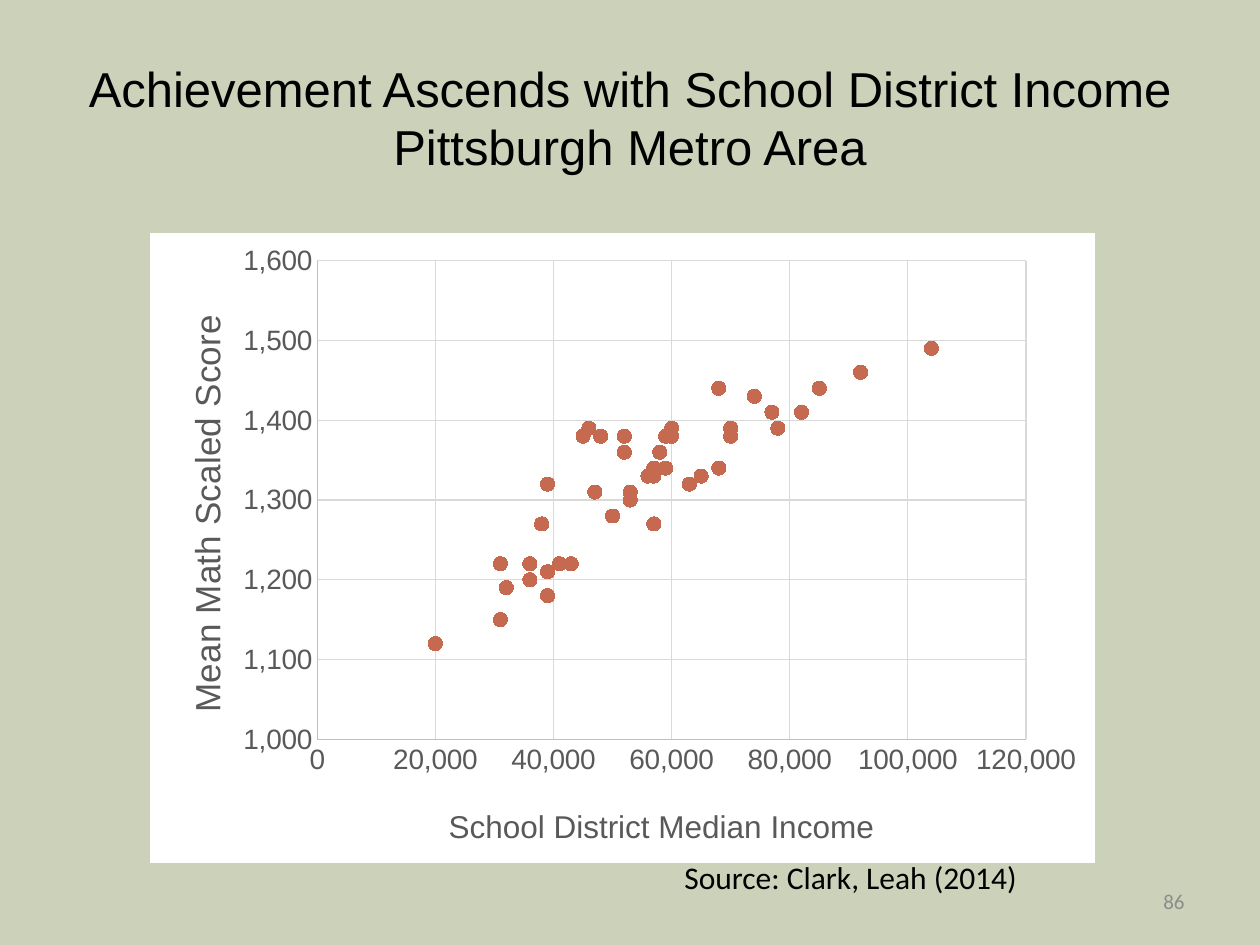
import lxml.etree
import pptx
import pptx.chart.data
import pptx.dml.color
import pptx.enum.chart
import pptx.enum.text
import pptx.oxml
import pptx.oxml.ns
import pptx.util

RGBColor = pptx.dml.color.RGBColor
SAGE = RGBColor(0xCC, 0xD1, 0xB9)
BLACK = RGBColor(0, 0, 0)
WHITE = RGBColor(0xFF, 0xFF, 0xFF)
TERRACOTTA = RGBColor(0xC6, 0x69, 0x51)
LABEL_GRAY = RGBColor(0x59, 0x59, 0x59)
AXIS_GRAY = RGBColor(0xBF, 0xBF, 0xBF)
GRID_GRAY = RGBColor(0xD9, 0xD9, 0xD9)
NUMBER_GRAY = RGBColor(0x8C, 0x8C, 0x8C)
PX_PER_INCH = 126

INCOME_THOUSANDS = [
    20, 31, 31, 32, 36, 36, 38, 39, 39, 39, 41, 43, 45, 46, 47,
    48, 50, 52, 52, 53, 53, 56, 57, 57, 57, 58, 59, 59, 60, 60,
    63, 65, 68, 68, 70, 70, 74, 77, 78, 82, 85, 92, 104,
]
MATH_SCORES = [
    1120, 1220, 1150, 1190, 1220, 1200, 1270, 1210, 1320, 1180, 1220, 1220, 1380, 1390, 1310,
    1380, 1280, 1380, 1360, 1300, 1310, 1330, 1340, 1330, 1270, 1360, 1340, 1380, 1390, 1380,
    1320, 1330, 1340, 1440, 1390, 1380, 1430, 1410, 1390, 1410, 1440, 1460, 1490,
]


def px(length):
    """Turn slide pixels into EMU."""
    return pptx.util.Inches(length / PX_PER_INCH)


def style_font(font, size, color, name="Arial"):
    """Set the size, colour and typeface of a font."""
    font.size = pptx.util.Pt(size)
    font.color.rgb = color
    font.name = name
    font.bold = False


def style_line(line, color):
    """Set a thin solid line."""
    line.color.rgb = color
    line.width = pptx.util.Pt(0.75)


def set_layout(layout, **settings):
    """Fill a chart layout element with manual settings."""
    for child in list(layout):
        layout.remove(child)
    manual = lxml.etree.SubElement(layout, pptx.oxml.ns.qn("c:manualLayout"))
    for tag, value in settings.items():
        lxml.etree.SubElement(manual, pptx.oxml.ns.qn(f"c:{tag}")).set("val", str(value))


def add_heading(slide, left, top, width, height):
    """Place the two-line slide title."""
    heading = slide.shapes.title
    heading.left, heading.top = px(left), px(top)
    heading.width, heading.height = px(width), px(height)
    heading.text_frame.text = (
        "Achievement Ascends with School District Income\vPittsburgh Metro Area"
    )
    heading.text_frame.vertical_anchor = pptx.enum.text.MSO_ANCHOR.MIDDLE
    paragraph = heading.text_frame.paragraphs[0]
    paragraph.alignment = pptx.enum.text.PP_ALIGN.CENTER
    for run in paragraph.runs:
        style_font(run.font, 28, BLACK)


def style_axis(axis, title, title_size, minimum, maximum, step):
    """Set the scale, grid, labels and title of one axis."""
    axis.minimum_scale, axis.maximum_scale, axis.major_unit = minimum, maximum, step
    axis.major_tick_mark = axis.minor_tick_mark = pptx.enum.chart.XL_TICK_MARK.NONE
    axis.has_major_gridlines = True
    style_line(axis.major_gridlines.format.line, GRID_GRAY)
    style_line(axis.format.line, AXIS_GRAY)
    axis.tick_labels.number_format = "#,##0"
    axis.tick_labels.number_format_is_linked = False
    style_font(axis.tick_labels.font, 16, LABEL_GRAY)
    axis.axis_title.text_frame.text = title
    style_font(axis.axis_title.text_frame.paragraphs[0].runs[0].font, title_size, LABEL_GRAY)


def add_score_chart(slide, left, top, width, height):
    """Place the scatter chart of scores against income."""
    data = pptx.chart.data.XyChartData()
    districts = data.add_series("Series 1")
    for income, score in zip(INCOME_THOUSANDS, MATH_SCORES):
        districts.add_data_point(income * 1000, score)
    chart = slide.shapes.add_chart(
        pptx.enum.chart.XL_CHART_TYPE.XY_SCATTER,
        px(left), px(top), px(width), px(height), data,
    ).chart
    chart.has_legend = chart.has_title = False
    style_font(chart.font, 14, BLACK)
    style_axis(chart.category_axis, "School District Median Income", 18, 0, 120000, 20000)
    style_axis(chart.value_axis, "Mean Math Scaled Score", 20, 1000, 1600, 100)

    plot = chart.plots[0]
    plot.vary_by_categories = False
    points = plot.series[0]
    points.format.line.fill.background()
    points.marker.style = pptx.enum.chart.XL_MARKER_STYLE.CIRCLE
    points.marker.size = 8
    points.marker.format.fill.solid()
    points.marker.format.fill.fore_color.rgb = TERRACOTTA
    points.marker.format.line.color.rgb = TERRACOTTA

    chart_space = chart.element
    plot_area = chart_space.xpath("c:chart/c:plotArea")[0]
    plot_layouts = plot_area.xpath("c:layout")
    if not plot_layouts:
        plot_area.insert(0, plot_area.makeelement(pptx.oxml.ns.qn("c:layout")))
        plot_layouts = plot_area.xpath("c:layout")
    set_layout(
        plot_layouts[0], layoutTarget="inner", xMode="edge", yMode="edge",
        x=0.177, y=0.044, w=0.75, h=0.76,
    )
    title_layouts = plot_area.xpath("c:valAx/c:title/c:layout")
    for layout, (x, y) in zip(title_layouts, [(0.31, 0.9), (0.03, 0.12)]):
        set_layout(layout, xMode="edge", yMode="edge", x=x, y=y)
    background = pptx.oxml.parse_xml(
        f'<c:spPr {pptx.oxml.ns.nsdecls("c", "a")}><a:solidFill><a:srgbClr val="{WHITE}"/>'
        "</a:solidFill><a:ln><a:noFill/></a:ln></c:spPr>"
    )
    chart_space.xpath("c:chart")[0].addnext(background)


def add_note(slide, left, top, width, height, words, size, color, alignment, anchor):
    """Place one line of small text below the chart."""
    frame = slide.shapes.add_textbox(px(left), px(top), px(width), px(height)).text_frame
    frame.word_wrap = True
    frame.vertical_anchor = anchor
    frame.text = words
    frame.paragraphs[0].alignment = alignment
    style_font(frame.paragraphs[0].runs[0].font, size, color, "Calibri")


def main():
    """Build and save the slide."""
    align = pptx.enum.text.PP_ALIGN
    anchor = pptx.enum.text.MSO_ANCHOR
    deck = pptx.Presentation()
    deck.slide_width, deck.slide_height = px(1260), px(945)
    slide = deck.slides.add_slide(deck.slide_layouts[5])
    slide.background.fill.solid()
    slide.background.fill.fore_color.rgb = SAGE
    add_heading(slide, 63, 38, 1134, 158)
    add_score_chart(slide, 150, 233, 945, 630)
    add_note(slide, 903, 876, 294, 50, "86", 12, NUMBER_GRAY, align.RIGHT, anchor.MIDDLE)
    add_note(slide, 672, 852, 404, 50, "Source: Clark, Leah (2014)", 18, BLACK,
             align.LEFT, anchor.TOP)
    deck.save("out.pptx")


if __name__ == "__main__":
    main()
